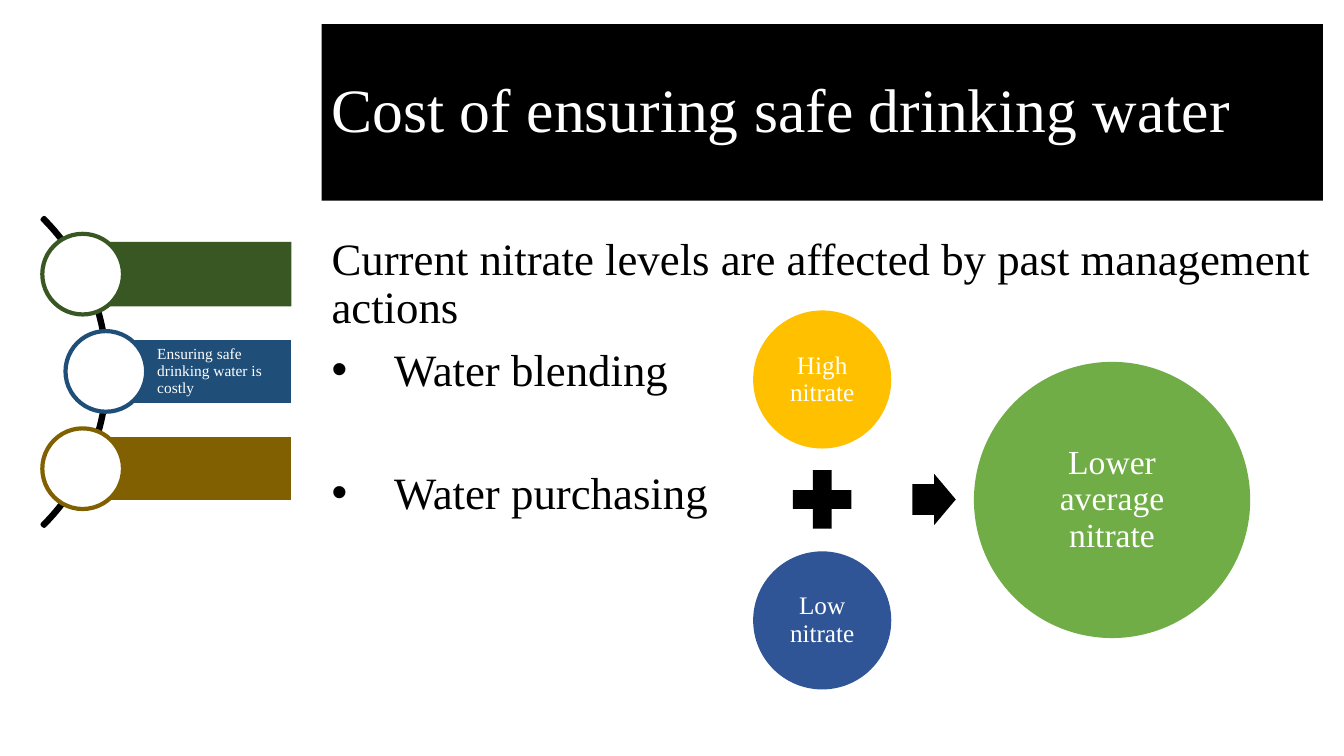
from lxml import etree
from pptx import Presentation
from pptx.dml.color import RGBColor
from pptx.enum.shapes import MSO_SHAPE
from pptx.enum.text import MSO_ANCHOR, PP_ALIGN
from pptx.oxml.ns import qn
from pptx.util import Inches, Pt

COLORS = {
    "black": "000000", "white": "FFFFFF",
    "dark green": "385723", "dark blue": "1F4E79", "brown": "806000",
    "yellow": "FFC000", "blue": "2F5597", "green": "70AD47",
}


def write(paragraph, text, size, color="white", align=PP_ALIGN.LEFT, before=0, bullet=False):
    paragraph.alignment = align
    paragraph.line_spacing = 0.9
    paragraph.space_before = Pt(before)
    run = paragraph.add_run()
    run.text = text
    run.font.size = Pt(size)
    run.font.name = "Times New Roman"
    run.font.color.rgb = RGBColor.from_string(COLORS[color])
    if bullet:
        properties = paragraph._p.get_or_add_pPr()
        properties.set("marL", str(Inches(0.62)))
        properties.set("indent", str(-Inches(0.62)))
        etree.SubElement(properties, qn("a:buFont"), typeface="Arial")
        etree.SubElement(properties, qn("a:buChar"), char="•")


def draw(preset, left, top, width, height, fill=None, line=None, weight=1):
    """Add a preset shape without shadow, with narrow margins for its label."""
    shape = slide.shapes.add_shape(
        preset, Inches(left), Inches(top), Inches(width), Inches(height))
    shape.shadow.inherit = False
    if fill:
        shape.fill.solid()
        shape.fill.fore_color.rgb = RGBColor.from_string(COLORS[fill])
    else:
        shape.fill.background()
    if line:
        shape.line.color.rgb = RGBColor.from_string(COLORS[line])
        shape.line.width = Pt(weight)
    else:
        shape.line.fill.background()
    frame = shape.text_frame
    frame.word_wrap = True
    frame.vertical_anchor = MSO_ANCHOR.MIDDLE
    frame.margin_left = frame.margin_right = Inches(0.03)
    frame.margin_top = frame.margin_bottom = Inches(0.03)
    return shape


prs = Presentation()
prs.slide_width = Inches(13.33)
prs.slide_height = Inches(7.5)
slide = prs.slides.add_slide(prs.slide_layouts[5])

# Title band
title = slide.shapes.title
title.left, title.top = Inches(3.19), Inches(0.24)
title.width, title.height = Inches(9.93), Inches(1.75)
title.fill.solid()
title.fill.fore_color.rgb = RGBColor.from_string(COLORS["black"])
title.text_frame.vertical_anchor = MSO_ANCHOR.MIDDLE
write(title.text_frame.paragraphs[0], "Cost of ensuring safe drinking water", 44)

# Statement and its two measures
body = slide.shapes.add_textbox(
    Inches(3.19), Inches(2.3), Inches(9.93), Inches(4.91)).text_frame
body.word_wrap = True
write(body.paragraphs[0], "Current nitrate levels are affected by past management actions",
      32, "black", before=10)
write(body.add_paragraph(), "Water blending", 32, "black", before=10, bullet=True)
write(body.add_paragraph(), "Water purchasing", 32, "black", before=53, bullet=True)

# Section navigator: an arc with three stops
arc = draw(MSO_SHAPE.BLOCK_ARC, -3.25, 1.53, 4.32, 4.32, line="black", weight=3)
for index, value in enumerate((189, 27, 0.005)):
    arc.adjustments[index] = value

STOP_SIZE = 0.8
BAR_RIGHT = 2.89
stops = [
    (0.42, "dark green", None, ""),
    (0.65, "dark blue", "white", "Ensuring safe drinking water is costly"),
    (0.42, "brown", "white", ""),
]
for index, (left, color, outline, label) in enumerate(stops):
    top = 2.32 + index * 0.965
    bar_left = left + STOP_SIZE / 2
    bar = draw(MSO_SHAPE.RECTANGLE, bar_left, top + 0.08, BAR_RIGHT - bar_left, 0.64,
               color, outline)
    if label:
        bar.text_frame.margin_left = Inches(0.51)
        write(bar.text_frame.paragraphs[0], label, 11)
    draw(MSO_SHAPE.OVAL, left, top, STOP_SIZE, STOP_SIZE, "white", color, 3)

# Blending equation: high + low -> lower average
waters = [
    ("High nitrate", 7.47, 3.08, 1.37, "yellow", 18),
    ("Low nitrate", 7.47, 5.47, 1.37, "blue", 18),
    ("Lower average nitrate", 9.66, 3.59, 2.74, "green", 24),
]
for label, left, top, diameter, color, size in waters:
    water = draw(MSO_SHAPE.OVAL, left, top, diameter, diameter, color)
    write(water.text_frame.paragraphs[0], label, size, align=PP_ALIGN.CENTER)

draw(MSO_SHAPE.MATH_PLUS, 7.76, 4.56, 0.79, 0.79, "black")
arrow = draw(MSO_SHAPE.RIGHT_ARROW, 9.05, 4.7, 0.43, 0.51, "black")
arrow.adjustments[0] = 0.6
arrow.adjustments[1] = 0.5

prs.save("out.pptx")
